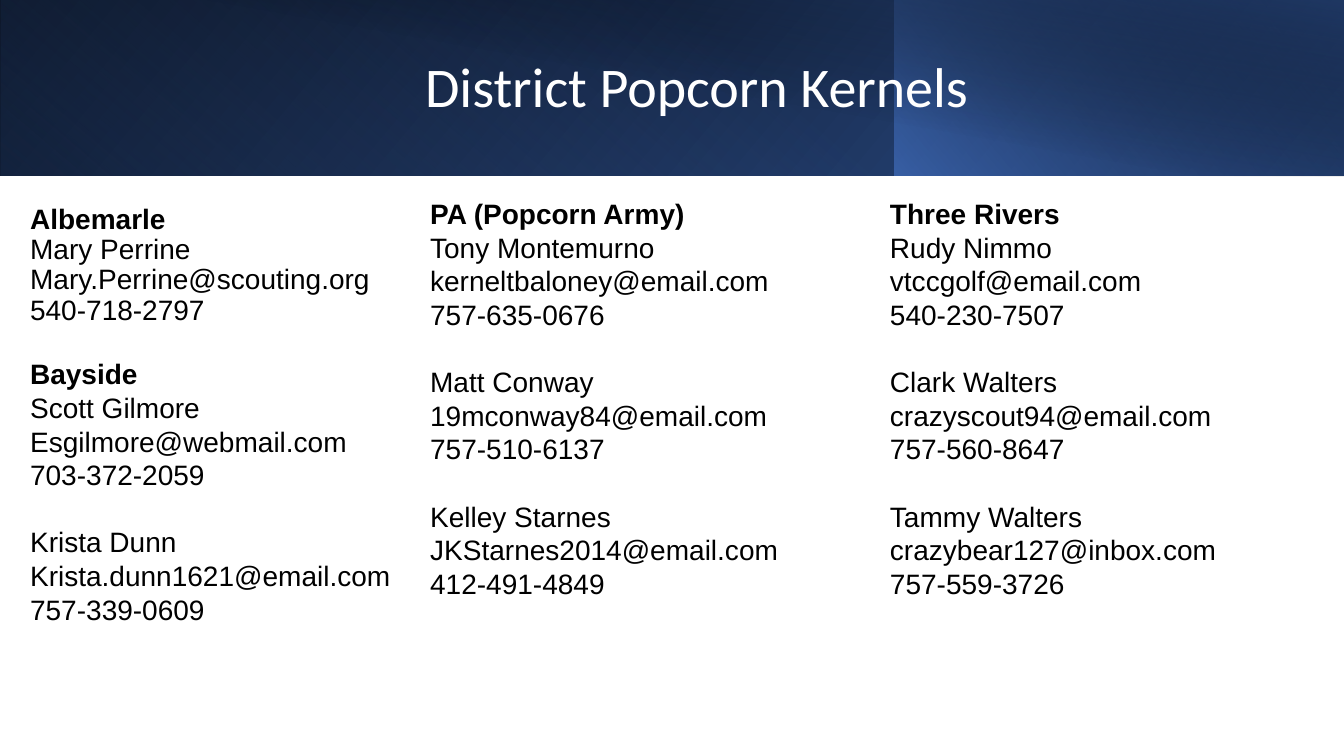
from lxml import etree
from pptx import Presentation
from pptx.dml.color import RGBColor as RGB
from pptx.enum.shapes import MSO_SHAPE as SHAPE
from pptx.enum.text import MSO_ANCHOR as ANCHOR, PP_ALIGN as ALIGN
from pptx.oxml.ns import qn
from pptx.util import Pt

# Content
TITLE = "District Popcorn Kernels"
ALBEMARLE = ("Albemarle", [
    ("Mary Perrine", "Mary.Perrine@scouting.org", "540-718-2797"),
])
BAYSIDE = ("Bayside", [
    ("Scott Gilmore", "Esgilmore@webmail.com", "703-372-2059"),
    ("Krista Dunn", "Krista.dunn1621@email.com", "757-339-0609"),
])
POPCORN_ARMY = ("PA (Popcorn Army)", [
    ("Tony Montemurno", "kerneltbaloney@email.com", "757-635-0676"),
    ("Matt Conway", "19mconway84@email.com", "757-510-6137"),
    ("Kelley Starnes", "JKStarnes2014@email.com", "412-491-4849"),
])
THREE_RIVERS = ("Three Rivers", [
    ("Rudy Nimmo", "vtccgolf@email.com", "540-230-7507"),
    ("Clark Walters", "crazyscout94@email.com", "757-560-8647"),
    ("Tammy Walters", "crazybear127@inbox.com", "757-559-3726"),
])

THEME = {
    "title_font": "Calibri", "title_size": 40, "title_color": "FFFFFF",
    "body_font": "Arial", "body_size": 20, "body_color": "000000",
    "black": "000000", "navy": "1F3864", "blue": "2F5496", "sky": "4472C4",
}

# Layout, in points
SLIDE_W, SLIDE_H = 960, 540
BANNER_H, SPLIT_X = 125.3, 639
COLUMN_TOP = 136.8
GAP = 24  # space above each further contact

# Banner layers: box, gradient stops (position, colour, opacity), angle, flip, rotation
BANNER = [
    ((0, 0, SLIDE_W, BANNER_H),
     [(0, "black", 100), (100, "blue", 100)], 140, True, 0),
    ((0, 0, SPLIT_X, BANNER_H),
     [(0, "sky", 0), (20, "sky", 0), (100, "navy", 55)], 230, True, 180),
    ((SPLIT_X, 0, SLIDE_W - SPLIT_X, BANNER_H),
     [(0, "sky", 66), (100, "black", 30)], 220, True, 0),
    ((36, 0, SLIDE_W - 36, BANNER_H + 0.7),
     [(0, "black", 0), (50, "black", 0), (99, "navy", 52), (100, "navy", 52)],
     280, False, 0),
]

# District blocks: content, box, anchor, line spacing of the contact lines
DISTRICTS = [
    (ALBEMARLE, (14.4, COLUMN_TOP, 303, 103.7), ANCHOR.MIDDLE, 0.9),
    (POPCORN_ARMY, (300.2, COLUMN_TOP, 285, 315), ANCHOR.TOP, 1),
    (THREE_RIVERS, (628.6, COLUMN_TOP, 303, 298), ANCHOR.TOP, 1),
    (BAYSIDE, (14.4, 251.3, 274.3, 223), ANCHOR.TOP, 1),
]


def add_layer(s, box, stops, angle, flip, rotation):
    sp = s.shapes.add_shape(SHAPE.RECTANGLE, *map(Pt, box))
    sp.shadow.inherit = False
    sp.line.fill.background()
    sp.rotation = rotation
    if flip:
        sp._element.spPr.find(qn("a:xfrm")).set("flipH", "1")
    sp.fill.gradient()
    grad = sp._element.spPr.find(qn("a:gradFill"))
    stop_list = grad.find(qn("a:gsLst"))
    for stop in list(stop_list):
        stop_list.remove(stop)
    for position, color, opacity in stops:
        stop = etree.SubElement(stop_list, qn("a:gs"), pos=str(position * 1000))
        rgb = etree.SubElement(stop, qn("a:srgbClr"), val=THEME[color])
        etree.SubElement(rgb, qn("a:alpha"), val=str(opacity * 1000))
    grad.find(qn("a:lin")).set("ang", str(angle * 60000))


def add_text_frame(s, box, anchor):
    tf = s.shapes.add_textbox(*map(Pt, box)).text_frame
    tf.word_wrap = True
    tf.vertical_anchor = anchor
    return tf


def add_run(p, text, kind, bold=False):
    r = p.add_run()
    r.text = text
    r.font.name = THEME[kind + "_font"]
    r.font.size = Pt(THEME[kind + "_size"])
    r.font.color.rgb = RGB.from_string(THEME[kind + "_color"])
    r.font.bold = bold


def add_district(s, district, box, anchor, spacing):
    name, contacts = district
    tf = add_text_frame(s, box, anchor)
    add_run(tf.paragraphs[0], name, "body", bold=True)
    for i, contact in enumerate(contacts):
        for j, line in enumerate(contact):
            p = tf.add_paragraph()
            p.line_spacing = float(spacing)
            if i and j == 0:
                p.space_before = Pt(GAP)
            add_run(p, line, "body")


def main():
    prs = Presentation()
    prs.slide_width, prs.slide_height = Pt(SLIDE_W), Pt(SLIDE_H)
    s = prs.slides.add_slide(prs.slide_layouts[6])

    # Banner
    for layer in BANNER:
        add_layer(s, *layer)

    # Title
    p = add_text_frame(s, (108, 23, 779, 81.4), ANCHOR.MIDDLE).paragraphs[0]
    p.alignment = ALIGN.CENTER
    p.line_spacing = 0.9
    add_run(p, TITLE, "title")

    # District contacts
    for block in DISTRICTS:
        add_district(s, *block)

    prs.save("out.pptx")


if __name__ == "__main__":
    main()
